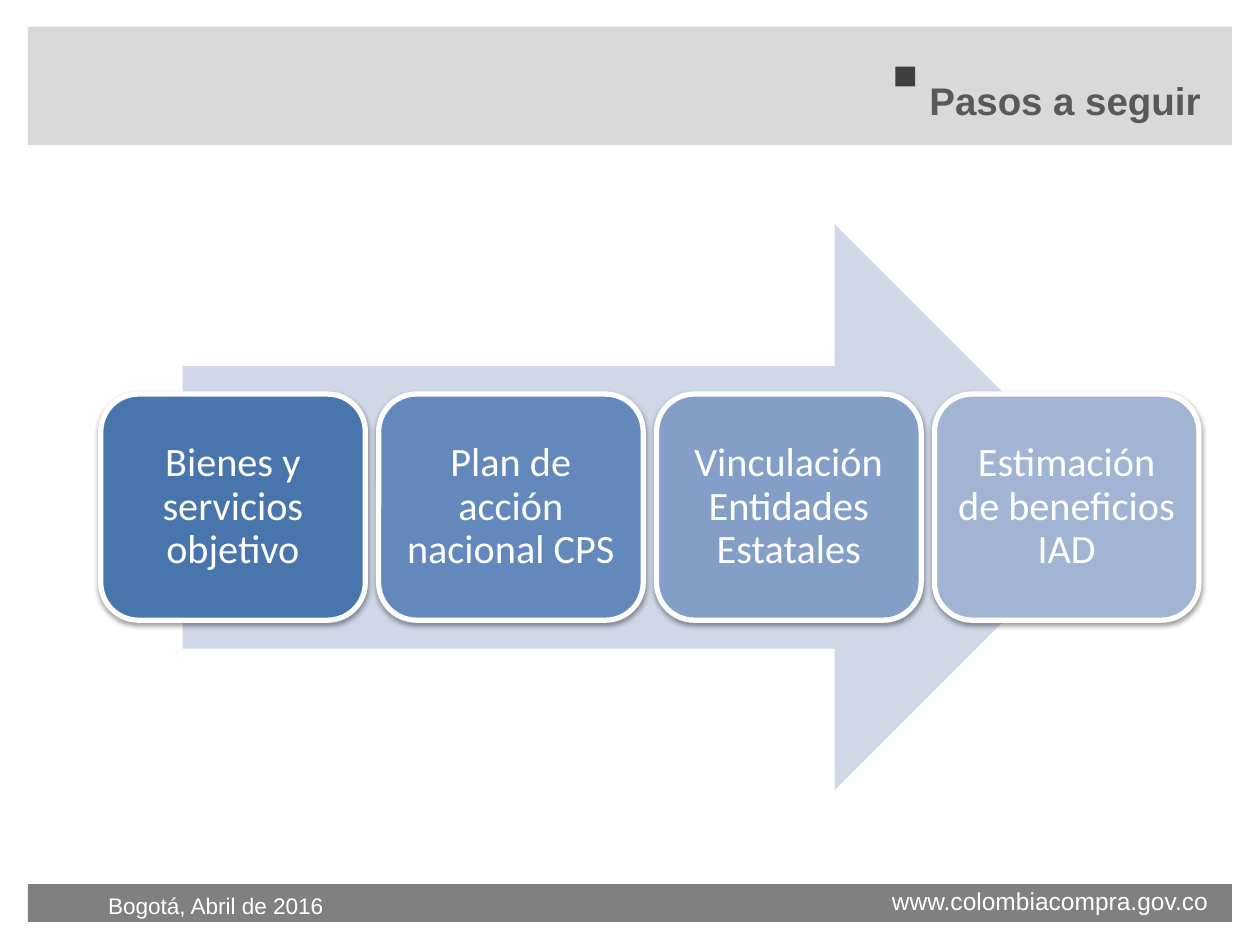
from lxml import etree
from pptx import Presentation
from pptx import util as u
from pptx.dml.color import RGBColor
from pptx.enum import shapes, text
from pptx.oxml.ns import qn

MSO = shapes.MSO_SHAPE
ALIGN = text.PP_ALIGN


def rgb(value):
    return RGBColor.from_string(value)


class Deck:
    heading = dict(name="Arial", size=u.Pt(22), bold=True)
    footer = dict(name="Arial", size=u.Pt(14))
    date = dict(name="Arial", size=u.Pt(12.9))
    step = dict(name="Calibri", size=u.Pt(23))

    def __init__(self, prs):
        self.s = prs.slides.add_slide(prs.slide_layouts[6])

    def set_text(self, tf, words, font, color, align, inset, **para):
        tf.word_wrap = True
        for side, gap in zip(("left", "top", "right", "bottom"), inset):
            setattr(tf, f"margin_{side}", u.Pt(gap))
        p = tf.paragraphs[0]
        for key, value in dict(alignment=align, **para).items():
            setattr(p, key, value)
        r = p.add_run()
        r.text = words
        for key, value in font.items():
            setattr(r.font, key, value)
        r.font.color.rgb = rgb(color)

    def shape(self, kind, box, fill):
        sp = self.s.shapes.add_shape(kind, *map(u.Pt, box))
        sp.shadow.inherit = False
        sp.fill.solid()
        sp.fill.fore_color.rgb = rgb(fill)
        sp.line.fill.background()
        return sp

    def label(self, box, words, font, color, align, left=0):
        tf = self.s.shapes.add_textbox(*map(u.Pt, box)).text_frame
        self.set_text(tf, words, font, color, align, (left, 0, 0, 0))

    def shadow(self, sp):
        effects = sp._element.spPr.find(qn("a:effectLst"))
        outer = etree.SubElement(
            effects, qn("a:outerShdw"), blurRad=str(u.Pt(3.1)),
            dist=str(u.Pt(1.6)), dir="5400000", rotWithShape="0")
        color = etree.SubElement(outer, qn("a:srgbClr"), val="000000")
        etree.SubElement(color, qn("a:alpha"), val="38000")

    def card(self, box, words, fill):
        sp = self.shape(MSO.ROUNDED_RECTANGLE, box, fill)
        sp.line.color.rgb = rgb("FFFFFF")
        sp.line.width = u.Pt(3)
        self.shadow(sp)
        sp.text_frame.vertical_anchor = text.MSO_ANCHOR.MIDDLE
        self.set_text(sp.text_frame, words, self.step, "FFFFFF", ALIGN.CENTER,
                      (7.2,) * 4, line_spacing=0.9)


def main():
    prs = Presentation()
    prs.slide_width, prs.slide_height = u.Pt(720), u.Pt(540)
    deck = Deck(prs)

    deck.shape(MSO.RECTANGLE, (16, 505.3, 688, 21.5), "808080")
    deck.label((482.4, 506.2, 228.2, 33.8), "www.colombiacompra.gov.co",
               deck.footer, "FFFFFF", ALIGN.CENTER, left=7.2)
    deck.label((54.7, 509.8, 281.5, 13.7), "Bogotá, Abril de 2016",
               deck.date, "FFFFFF", ALIGN.LEFT, left=7.2)

    deck.shape(MSO.RECTANGLE, (16, 15.3, 688, 67.7), "D9D9D9")
    deck.label((267.1, 43.9, 419, 28.8), "Pasos a seguir",
               deck.heading, "595959", ALIGN.RIGHT)
    deck.shape(MSO.RECTANGLE, (511.7, 38, 11.3, 11.3), "404040")

    deck.shape(MSO.RIGHT_ARROW, (104.4, 128.2, 534.2, 323.3), "D0D8E8")
    steps = [
        ("Bienes y servicios objetivo", "4875AC"),
        ("Plan de acción nacional CPS", "6389BC"),
        ("Vinculación Entidades Estatales", "839EC7"),
        ("Estimación de beneficios IAD", "A2B4D4"),
    ]
    left, width, gap = 57.6, 151.2, 7.6
    for i, (words, fill) in enumerate(steps):
        deck.card((left + i * (width + gap), 225.2, width, 129.2), words, fill)

    prs.save("out.pptx")


if __name__ == "__main__":
    main()
